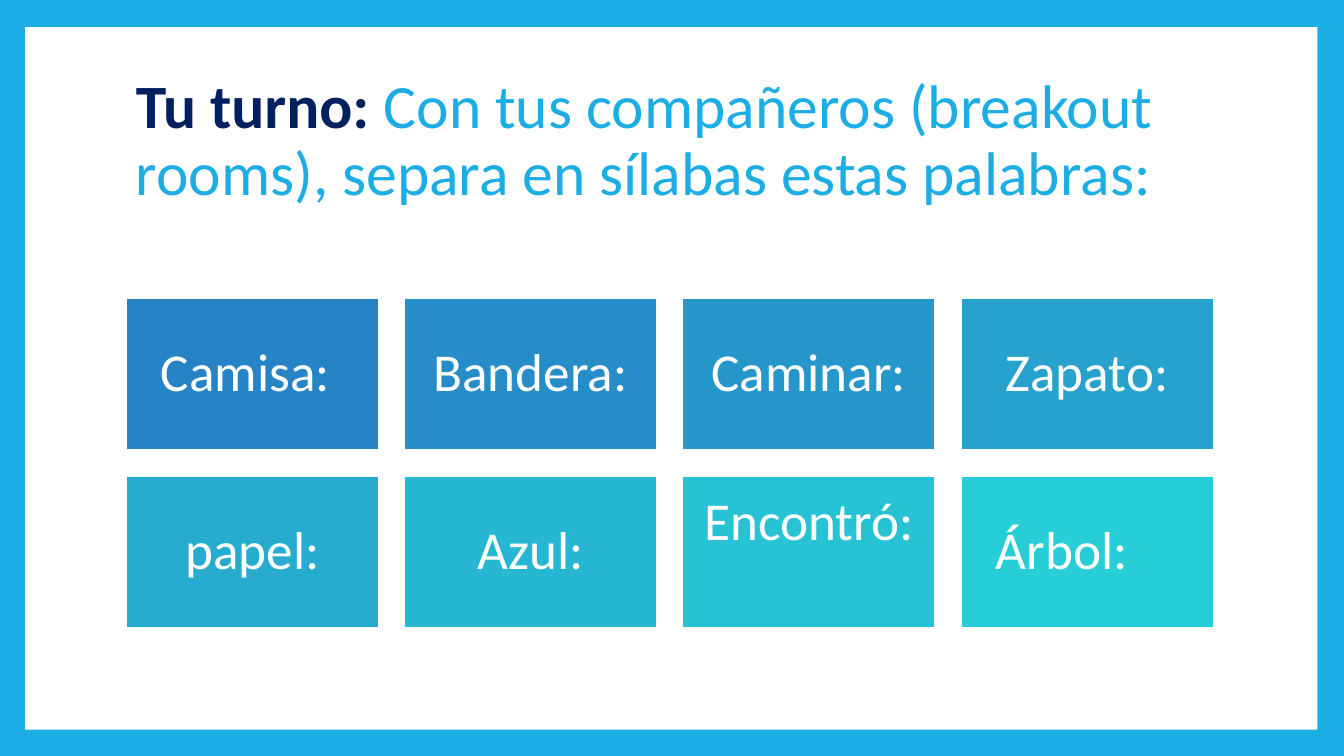
"""Build a slide with a framed title and a grid of words to split into syllables."""
import pptx
import pptx.dml.color
import pptx.enum.shapes
import pptx.enum.text
import pptx.util

Pt = pptx.util.Pt
SKY, WHITE, NAVY = "1CADE4", "FFFFFF", "002060"
INSET = 11.4
COLUMNS = 4
CARDS = [
    ("Camisa:", "2683C6", {"margin_right": Pt(INSET + 10)}),
    ("Bandera:", "268DC8", {}),
    ("Caminar:", "2697CB", {}),
    ("Zapato:", "26A2CD", {}),
    ("papel:", "27ACD0", {}),
    ("Azul:", "27B7D2", {}),
    ("Encontró:", "27C3D5", {"margin_bottom": Pt(INSET + 41.5)}),
    ("Árbol:", "27CED7", {"margin_right": Pt(INSET + 36)}),
]


def set_attrs(obj, values):
    """Set every attribute in values on obj."""
    for name, value in values.items():
        setattr(obj, name, value)


def paint(fmt, color):
    """Give a fill a solid colour from a hex string."""
    fmt.solid()
    fmt.fore_color.rgb = pptx.dml.color.RGBColor.from_string(color)


def add_run(p, text, size, color, bold=False):
    """Append a formatted run to a paragraph."""
    r = p.add_run()
    r.text = text
    set_attrs(r.font, {"name": "Calibri", "size": Pt(size), "bold": bold})
    paint(r.font.fill, color)


def add_rect(s, box, color):
    """Add a plain rectangle without a line."""
    sp = s.shapes.add_shape(
        pptx.enum.shapes.MSO_SHAPE.RECTANGLE, *map(Pt, box))
    sp.shadow.inherit = False
    paint(sp.fill, color)
    sp.line.fill.background()
    return sp


def prepare_text(sp, align, margins):
    """Set up the text frame of a shape and return its first paragraph."""
    tf = sp.text_frame
    set_attrs(tf, {
        "word_wrap": True,
        "vertical_anchor": pptx.enum.text.MSO_ANCHOR.MIDDLE,
        **margins,
    })
    p = tf.paragraphs[0]
    set_attrs(p, {"alignment": align, "line_spacing": 0.9})
    return p


def add_title(s):
    """Add the two-colour title."""
    sp = s.shapes.add_textbox(*map(Pt, (90, 48.24, 777.6, 106.56)))
    p = prepare_text(sp, pptx.enum.text.PP_ALIGN.LEFT, {})
    add_run(p, "Tu turno: ", 44, NAVY, True)
    add_run(p, "Con tus compañeros (breakout rooms), "
               "separa en sílabas estas palabras:", 44, SKY)


def add_card(s, index, word, color, margins):
    """Add one word card at its place in the grid."""
    row, col = divmod(index, COLUMNS)
    box = (90 + col * 198.72, 213.12 + row * 126.72, 180.72, 108.72)
    sp = add_rect(s, box, color)
    paint(sp.line.fill, WHITE)
    sp.line.width = Pt(1.5)
    sides = ("left", "top", "right", "bottom")
    insets = {f"margin_{side}": Pt(INSET) for side in sides}
    p = prepare_text(sp, pptx.enum.text.PP_ALIGN.CENTER, {**insets, **margins})
    add_run(p, word, 38, WHITE)


def main():
    """Build and save the slide."""
    prs = pptx.Presentation()
    set_attrs(prs, {"slide_width": Pt(960), "slide_height": Pt(540)})
    s = prs.slides.add_slide(prs.slide_layouts[6])
    paint(s.background.fill, SKY)
    add_rect(s, (18, 19.44, 923.04, 501.84), WHITE)
    add_title(s)
    for index, card in enumerate(CARDS):
        add_card(s, index, *card)
    prs.save("out.pptx")


if __name__ == "__main__":
    main()
